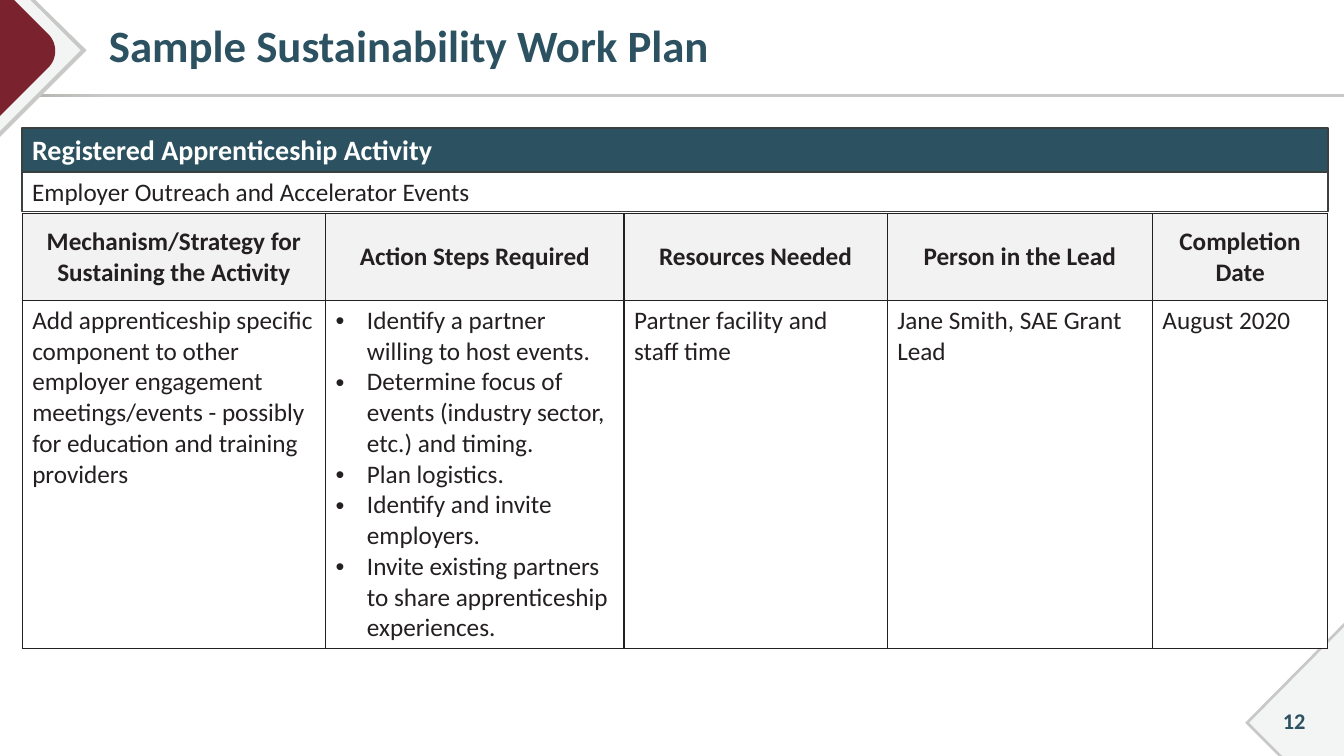
import pptx
import pptx.dml.color
import pptx.enum.shapes
import pptx.enum.text
import pptx.util
from lxml import etree
from pptx.oxml.ns import qn
from pptx.util import Inches

TEAL, MAROON, GREY, PALE = "2C5261", "7A232F", "C8C8C6", "F3F4F4"
INK, OUTLINE, HEADER, WHITE = "242021", "3A4040", "F2F2F2", "FFFFFF"
ALIGN = pptx.enum.text.PP_ALIGN
ANCHOR = pptx.enum.text.MSO_ANCHOR
RECTANGLE = pptx.enum.shapes.MSO_SHAPE.RECTANGLE

COLUMN_WIDTHS = [3.01, 2.96, 2.61, 2.63, 1.74]
ROW_HEIGHTS = [0.86, 3.44]
HEADINGS = [
    "Mechanism/Strategy for Sustaining the Activity",
    "Action Steps Required",
    "Resources Needed",
    "Person in the Lead",
    "Completion\nDate",
]
PLAN = [
    ["Add apprenticeship specific component to other employer engagement "
     "meetings/events - possibly for education and training providers"],
    ["Identify a partner willing to host events.",
     "Determine focus of events (industry sector, etc.) and timing.",
     "Plan logistics.",
     "Identify and invite employers.",
     "Invite existing partners to share apprenticeship experiences."],
    ["Partner facility and staff time"],
    ["Jane Smith, SAE Grant Lead"],
    ["August 2020"],
]


def rgb(value):
    return pptx.dml.color.RGBColor.from_string(value)


def fill_solid(target, color):
    target.fill.solid()
    target.fill.fore_color.rgb = rgb(color)


def add_bullet(paragraph):
    properties = paragraph._p.get_or_add_pPr()
    properties.set("marL", str(Inches(0.31)))
    properties.set("indent", str(-Inches(0.31)))
    etree.SubElement(properties, qn("a:buFont")).set("typeface", "Arial")
    etree.SubElement(properties, qn("a:buChar")).set("char", "•")


def write_text(frame, texts, size, color, bold=False, align=ALIGN.LEFT,
               anchor=ANCHOR.TOP, bulleted=False):
    frame.word_wrap = True
    frame.vertical_anchor = anchor
    font_format = {"name": "Calibri", "size": pptx.util.Pt(size), "bold": bold}
    for index, text in enumerate(texts):
        paragraph = frame.add_paragraph() if index else frame.paragraphs[0]
        paragraph.text = text
        paragraph.alignment = align
        if bulleted:
            add_bullet(paragraph)
        for run in paragraph.runs:
            for name, value in font_format.items():
                setattr(run.font, name, value)
            run.font.color.rgb = rgb(color)


def add_title(slide, text):
    title = slide.shapes.title
    place = {"left": 0.88, "top": 0.05, "width": 12.12, "height": 0.86}
    for name, value in place.items():
        setattr(title, name, Inches(value))
    frame = title.text_frame
    frame.margin_left = Inches(0.2)
    write_text(frame, [text], 32, TEAL, bold=True, anchor=ANCHOR.MIDDLE)
    frame.paragraphs[0].line_spacing = 0.9


def add_rule(slide):
    """Add the grey line under the title, slightly darker at its left end."""
    rule = slide.shapes.add_shape(
        RECTANGLE, 0, Inches(0.93), Inches(13.33), Inches(0.03))
    rule.shadow.inherit = False
    rule.line.fill.background()
    rule.fill.gradient()
    rule.fill.gradient_angle = 0
    stops = [(0, "ABABA8"), (0.08, GREY)]
    for stop, (position, color) in zip(rule.fill.gradient_stops, stops):
        stop.position = position
        stop.color.rgb = rgb(color)


def add_polygon(slide, points, color):
    corners = [(Inches(x), Inches(y)) for x, y in points]
    builder = slide.shapes.build_freeform(*corners[0])
    builder.add_line_segments(corners[1:], close=True)
    polygon = builder.convert_to_shape()
    polygon.shadow.inherit = False
    polygon.line.fill.background()
    fill_solid(polygon, color)


def curve_points(start, control_1, control_2, end, steps=16):
    """Return points along a cubic Bézier curve."""
    points = []
    for step in range(steps + 1):
        t = step / steps
        weights = ((1 - t) ** 3, 3 * t * (1 - t) ** 2, 3 * t * t * (1 - t), t ** 3)
        points.append(tuple(
            sum(weight * value for weight, value in zip(weights, values))
            for values in zip(start, control_1, control_2, end)))
    return points


def add_corners(slide):
    for edge, tip, color in [(0.35, 0.86, GREY), (0.3, 0.8, PALE)]:
        add_polygon(slide, [(0, 0), (edge, 0), (tip, 0.5), (0, tip + 0.5)], color)
    rounded_tip = curve_points((0.48, 0.34), (0.57, 0.43), (0.57, 0.58), (0.48, 0.67))
    add_polygon(slide, [(0, 0), (0.14, 0), *rounded_tip, (0, 1.15)], MAROON)
    for top, tip, color in [(6.18, 12.35, GREY), (6.22, 12.39, PALE)]:
        add_polygon(slide, [(13.33, top), (13.33, 7.5), (tip + 0.33, 7.5),
                            (tip, 7.17)], color)


def add_band(slide, text, top, height, size, color, bold=False, fill=None):
    band = slide.shapes.add_shape(
        RECTANGLE, Inches(0.22), Inches(top), Inches(12.95), Inches(height))
    band.shadow.inherit = False
    band.line.color.rgb = rgb(OUTLINE)
    band.line.width = pptx.util.Pt(1)
    if fill:
        fill_solid(band, fill)
    else:
        band.fill.background()
    write_text(band.text_frame, [text], size, color, bold)


def add_borders(cell):
    properties = cell._tc.get_or_add_tcPr()
    for side in ("lnL", "lnR", "lnT", "lnB"):
        line = etree.SubElement(properties, qn(f"a:{side}"))
        line.set("w", str(pptx.util.Pt(1)))
        solid = etree.SubElement(line, qn("a:solidFill"))
        etree.SubElement(solid, qn("a:srgbClr")).set("val", INK)


def add_plan_table(slide):
    table = slide.shapes.add_table(
        len(ROW_HEIGHTS), len(COLUMN_WIDTHS), Inches(0.22), Inches(2.12),
        Inches(sum(COLUMN_WIDTHS)), Inches(sum(ROW_HEIGHTS))).table
    table.first_row = table.horz_banding = False
    for row, height in zip(table.rows, ROW_HEIGHTS):
        row.height = Inches(height)
    for index, width in enumerate(COLUMN_WIDTHS):
        table.columns[index].width = Inches(width)
        heading, body = table.cell(0, index), table.cell(1, index)
        for cell, color in [(heading, HEADER), (body, WHITE)]:
            add_borders(cell)
            fill_solid(cell, color)
        write_text(heading.text_frame, [HEADINGS[index]], 18, INK, bold=True,
                   align=ALIGN.CENTER)
        heading.vertical_anchor = ANCHOR.MIDDLE
        write_text(body.text_frame, PLAN[index], 18, INK,
                   bulleted=len(PLAN[index]) > 1)


def add_page_number(slide, number):
    box = slide.shapes.add_textbox(
        Inches(12.48), Inches(6.95), Inches(0.71), Inches(0.4))
    write_text(box.text_frame, [number], 16, TEAL, bold=True,
               align=ALIGN.CENTER, anchor=ANCHOR.MIDDLE)


def main():
    presentation = pptx.Presentation()
    presentation.slide_width = Inches(13.33)
    presentation.slide_height = Inches(7.5)
    slide = presentation.slides.add_slide(presentation.slide_layouts[5])
    add_rule(slide)
    add_corners(slide)
    add_title(slide, "Sample Sustainability Work Plan")
    add_band(slide, "Registered Apprenticeship Activity", 1.27, 0.44, 20, WHITE,
             bold=True, fill=TEAL)
    add_band(slide, "Employer Outreach and Accelerator Events", 1.7, 0.4, 18, INK)
    add_plan_table(slide)
    add_page_number(slide, "12")
    presentation.save("out.pptx")


if __name__ == "__main__":
    main()
